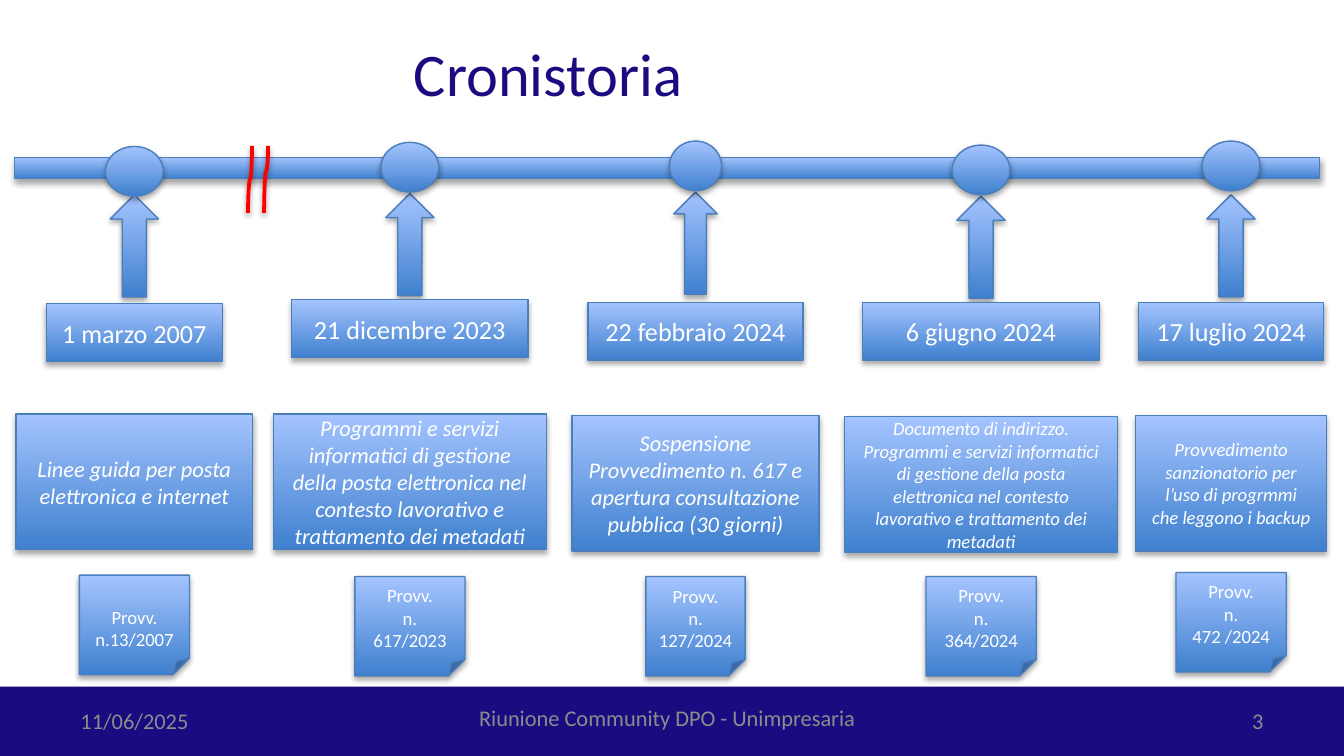
from lxml import etree
from pptx import Presentation
from pptx import util as u
from pptx.dml.color import RGBColor
from pptx.enum import shapes, text
from pptx.oxml import ns

CELL = u.Inches(0.1)
COLS, ROWS = 100, 56.25
NAVY, GREY, WHITE, RED = "1A0B80", "8C8C8C", "FFFFFF", "FF0000"
BLUE_DARK, BLUE_LIGHT, BLUE_EDGE = "3F80CE", "A4C4FF", "4B7EBC"
KIND, ALIGN = shapes.MSO_SHAPE, text.PP_ALIGN

METADATA = ("rogrammi e servizi informatici di gestione della posta elettronica "
            "nel contesto lavorativo e trattamento dei metadati")

# centre, scale, tops of (node, arrow, date, summary, note), date, summary, note
STAGES = [
    dict(centre=10, tops=(10.9, 14.5, 22.6, 30.8, 42.8), date="1 marzo 2007", date_w=13.1,
         summary="Linee guida per posta elettronica e internet", summary_w=17.6,
         note="Provv. n.13/2007", note_inset=2.2),
    dict(centre=30.5, tops=(10.6, 14.4, 22.3, 30.8, 42.9), date="21 dicembre 2023", date_w=17.6,
         summary="P" + METADATA, summary_w=20.3, note="Provv.\nn. 617/2023"),
    dict(centre=51.75, tops=(10.5, 14.3, 22.5, 30.9, 42.9), date="22 febbraio 2024", date_w=16,
         summary="Sospensione Provvedimento n. 617 e apertura consultazione pubblica (30 giorni)",
         summary_w=18.4, note="Provv.\nn. 127/2024", scale=0.9),
    dict(centre=73, tops=(10.8, 14.6, 22.5, 31, 42.9), date="6 giugno 2024", date_w=17.6,
         summary="Documento di indirizzo. P" + METADATA, summary_w=20.3, summary_size=10,
         note="Provv.\nn. 364/2024"),
    dict(centre=91.6, tops=(10.5, 14.5, 22.5, 30.9, 42.6), date="17 luglio 2024", date_w=13.8,
         summary="Provvedimento sanzionatorio per l’uso di progrmmi\nche leggono i backup",
         summary_w=14.2, summary_size=10, note="Provv.\nn.\n472 /2024"),
]


def cells(*counts):
    """Convert grid cells to whole slide units."""
    return [u.Emu(round(n * CELL)) for n in counts]


def rgb(value):
    """Turn a hex string into a colour."""
    return RGBColor.from_string(value)


def write(sp, content, size=12, color=WHITE, align=ALIGN.CENTER, italic=False, inset=1, top=0.5):
    """Fill a shape with formatted text, one paragraph per line."""
    tf = sp.text_frame
    tf.text = content
    tf.word_wrap, tf.auto_size = True, text.MSO_AUTO_SIZE.NONE
    tf.vertical_anchor = text.MSO_ANCHOR.MIDDLE
    tf.margin_left, tf.margin_right, tf.margin_top = cells(inset, inset, top)
    for p in tf.paragraphs:
        p.alignment = align
        for r in p.runs:
            r.font.name, r.font.size, r.font.italic = "Calibri", u.Pt(size), italic
            r.font.color.rgb = rgb(color)


def cast_shadow(sp, distance=1.8, alpha=35):
    """Give a shape or connector a soft shadow straight below it."""
    props = sp.element.spPr
    effects = props.find(ns.qn("a:effectLst"))
    if effects is None:
        effects = etree.SubElement(props, ns.qn("a:effectLst"))
    outer = etree.SubElement(effects, ns.qn("a:outerShdw"), blurRad=str(u.Pt(3.1)),
                             dist=str(u.Pt(distance)), dir="5400000", rotWithShape="0")
    color = etree.SubElement(outer, ns.qn("a:srgbClr"), val="000000")
    etree.SubElement(color, ns.qn("a:alpha"), val=str(alpha * 1000))


def add_block(s, kind, left, top, width, height, fill=None):
    """Add a shadowed shape, plain if a fill is given, else in the blue gradient."""
    sp = s.shapes.add_shape(kind, *cells(left, top, width, height))
    if fill:
        sp.fill.solid()
        sp.fill.fore_color.rgb = rgb(fill)
        sp.line.fill.background()
    else:
        sp.fill.gradient()
        sp.fill.gradient_angle = 90
        for stop, color in zip(sp.fill.gradient_stops, (BLUE_DARK, BLUE_LIGHT)):
            stop.color.rgb = rgb(color)
        sp.line.color.rgb, sp.line.width = rgb(BLUE_EDGE), u.Pt(0.75)
    sp.shadow.inherit = False
    cast_shadow(sp)
    return sp


def add_label(s, content, left, top, width, align):
    """Add one footer text."""
    write(s.shapes.add_textbox(*cells(left, top, width, 3)), content, color=GREY, align=align)


def add_break_mark(s, centre, bend):
    """Add an upright red curve that breaks the timeline."""
    x, y = centre - 2.5, 13.2
    c = s.shapes.add_connector(shapes.MSO_CONNECTOR.CURVE, *cells(x, y, x + 5, y + 0.3))
    c.line.color.rgb, c.line.width = rgb(RED), u.Pt(2)
    c.element.spPr.find(ns.qn("a:xfrm")).set("rot", "5400000")
    guides = c.element.spPr.find(".//" + ns.qn("a:avLst"))
    etree.SubElement(guides, ns.qn("a:gd"), name="adj1", fmla=f"val {bend}")
    cast_shadow(c, distance=1.6, alpha=38)


def add_stage(s, centre, tops, date, date_w, summary, summary_w, note,
              summary_size=12, note_inset=0.5, scale=1):
    """Add one timeline column: arrow, node, date, summary and note."""
    node_top, arrow_top, date_top, summary_top, note_top = tops

    def block(kind, top, width, height):
        """Add a shape centred on the column."""
        return add_block(s, kind, centre - width / 2, top, width, height)

    block(KIND.UP_ARROW, arrow_top, 3.6 * scale, 7.6)
    block(KIND.OVAL, node_top, 4.3 * scale, 3.7)
    write(block(KIND.RECTANGLE, date_top, date_w, 4.3), date, size=14)
    write(block(KIND.RECTANGLE, summary_top, summary_w, 10.1), summary,
          size=summary_size, italic=True)
    write(block(KIND.FOLDED_CORNER, note_top, 8.2 * scale, 7.4), note,
          size=10, inset=0.9, top=note_inset)


def add_title(s, content):
    """Place and format the title placeholder."""
    sp = s.shapes.title
    sp.left, sp.top, sp.width, sp.height = cells(29.8, 2.3, 65.2, 6.2)
    write(sp, content, size=32.4, color=NAVY, align=ALIGN.LEFT)


def main():
    """Build the timeline slide."""
    prs = Presentation()
    prs.slide_width, prs.slide_height = cells(COLS, ROWS)
    s = prs.slides.add_slide(prs.slide_layouts[5])
    add_block(s, KIND.RECTANGLE, 0, 51.1, COLS, ROWS - 51.1, fill=NAVY)
    add_title(s, "Cronistoria")
    add_label(s, "11/06/2025", 5, 52.1, 11.1, ALIGN.LEFT)
    add_label(s, "Riunione Community DPO - Unimpresaria", 15.9, 51.9, 67.5, ALIGN.CENTER)
    add_label(s, "3", 88.9, 52.1, 6.1, ALIGN.RIGHT)
    add_block(s, KIND.RECTANGLE, 1.1, 11.7, 97.1, 1.6)
    for stage in STAGES:
        add_stage(s, **stage)
    add_break_mark(s, 18.6, 50000)
    add_break_mark(s, 19.8, 37600)
    prs.save("out.pptx")


if __name__ == "__main__":
    main()
